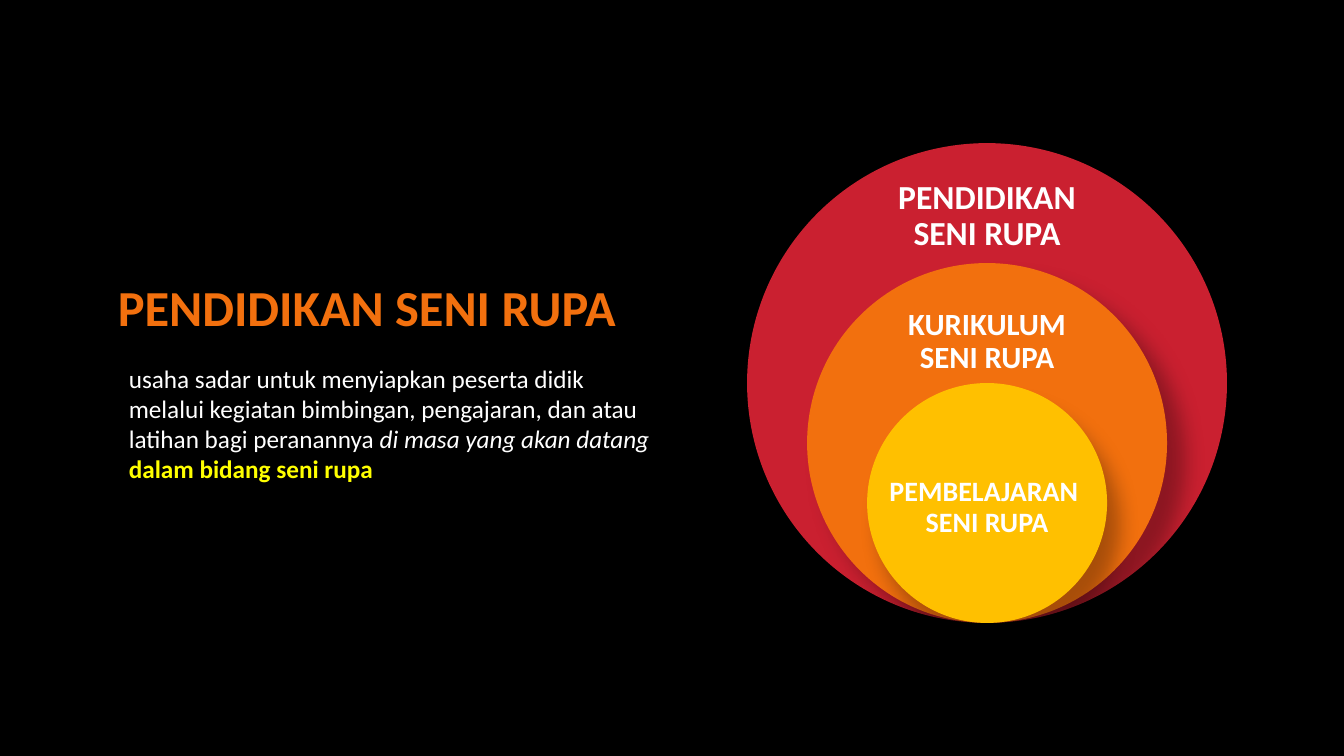
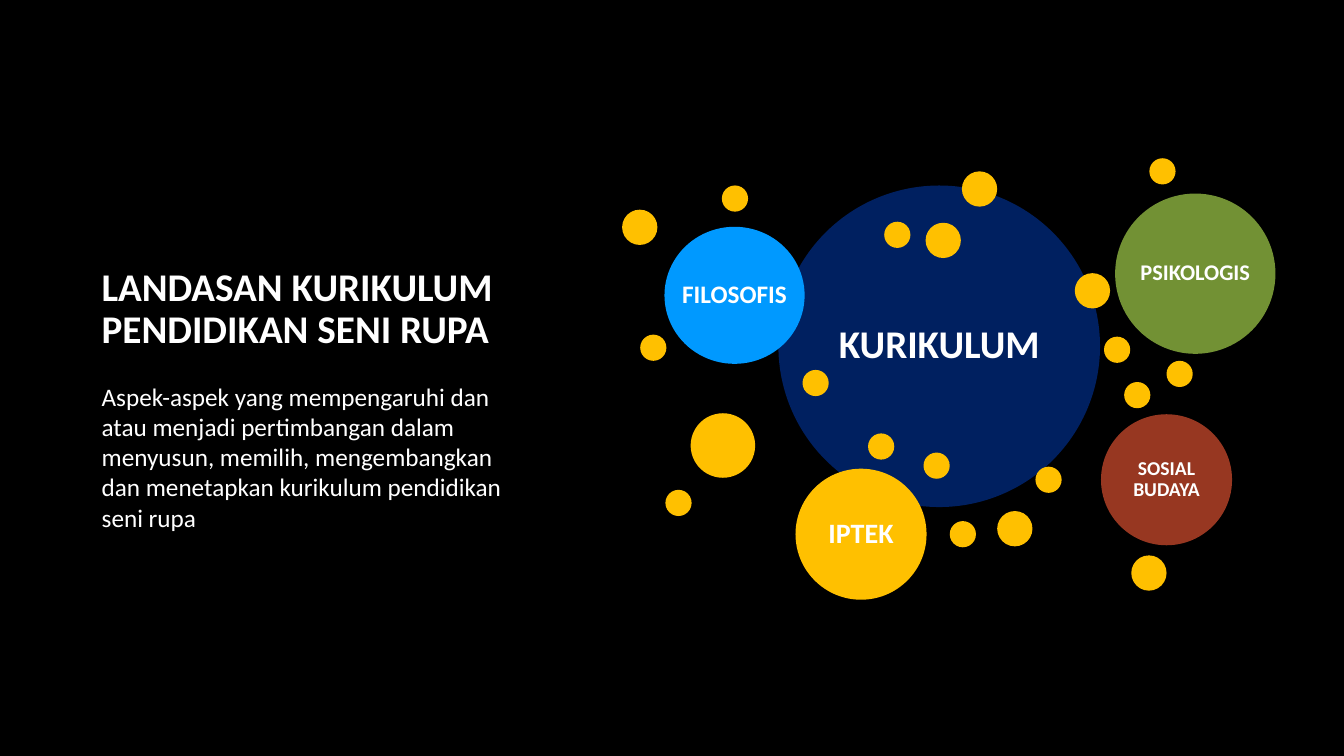
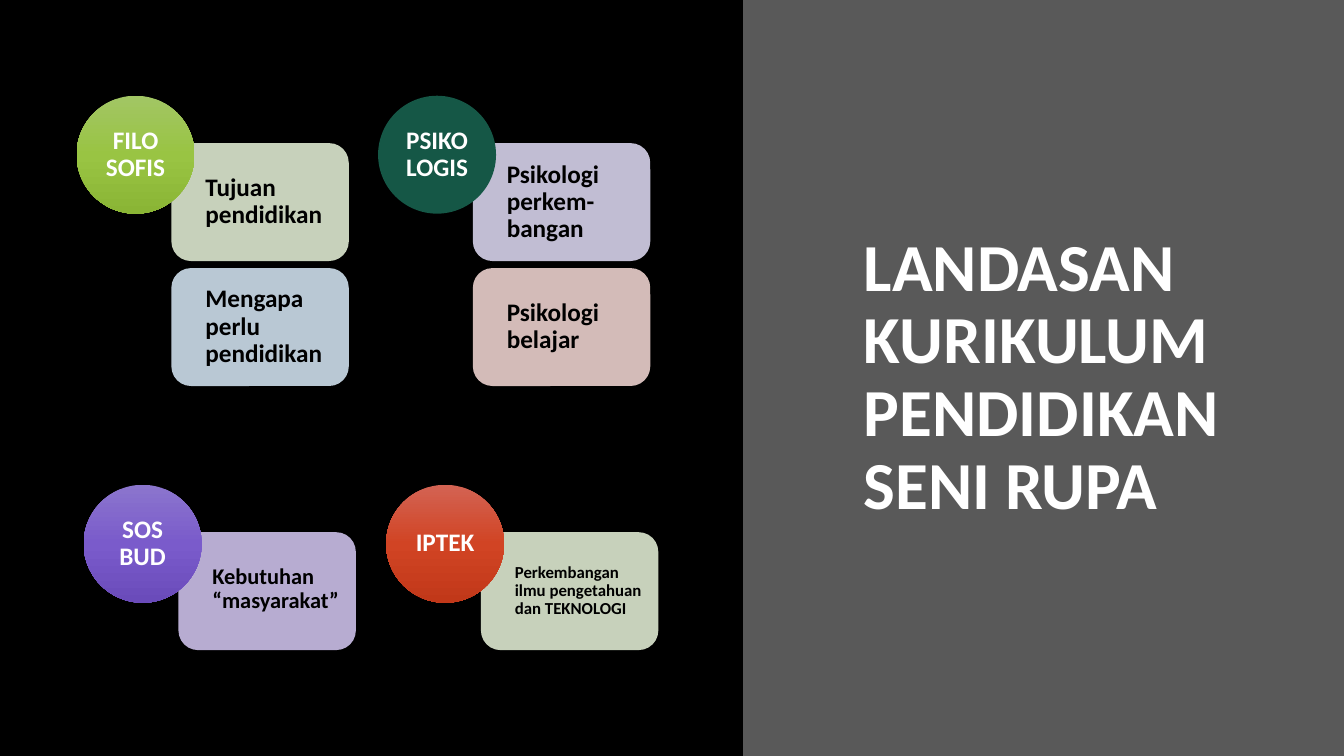
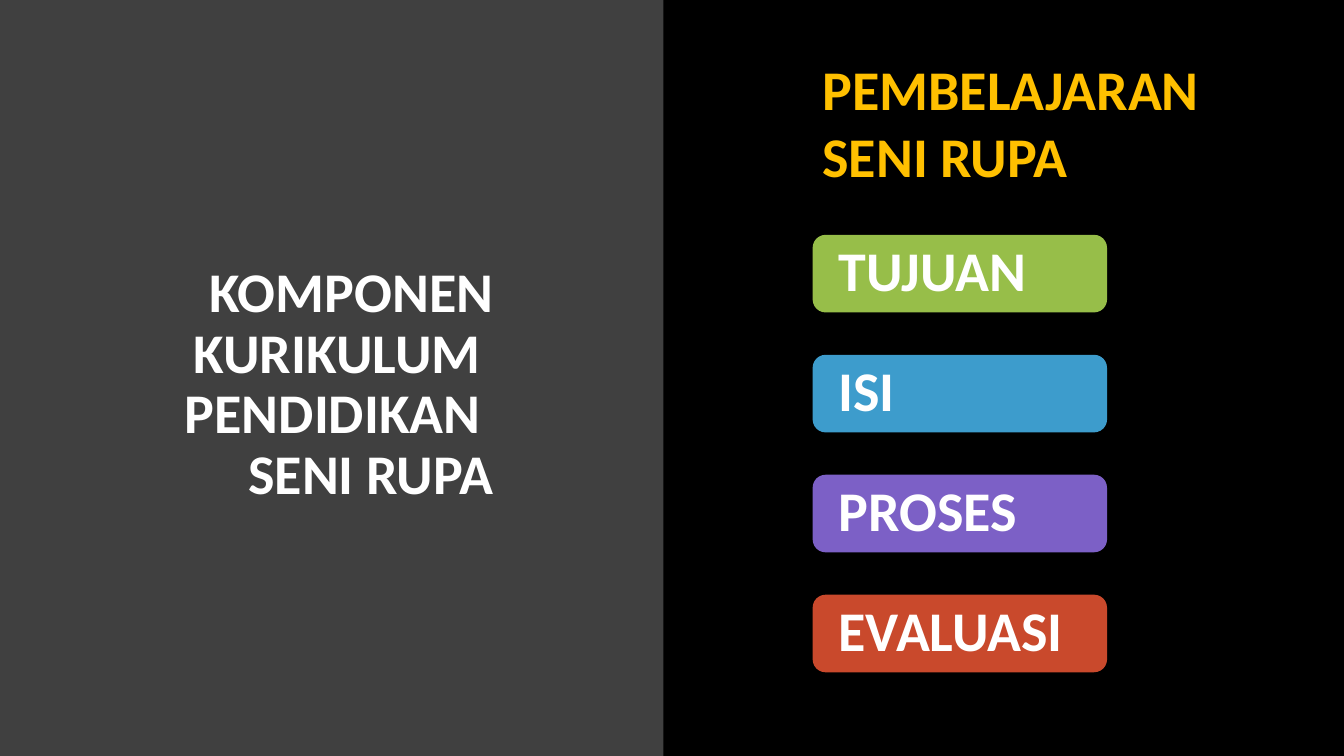
from dataclasses import dataclass
from typing import NamedTuple, Sequence

from lxml import etree
from pptx import Presentation
from pptx.dml.color import RGBColor
from pptx.enum.shapes import MSO_SHAPE
from pptx.enum.text import MSO_ANCHOR, PP_ALIGN
from pptx.oxml.ns import qn
from pptx.shapes.autoshape import Shape
from pptx.slide import Slide
from pptx.util import Inches, Pt

ELLIPSE, RECTANGLE = MSO_SHAPE.OVAL, MSO_SHAPE.RECTANGLE
ROUNDED = MSO_SHAPE.ROUNDED_RECTANGLE
LEFT, CENTER, RIGHT = PP_ALIGN.LEFT, PP_ALIGN.CENTER, PP_ALIGN.RIGHT
TOP, MIDDLE = MSO_ANCHOR.TOP, MSO_ANCHOR.MIDDLE

SLIDE_WIDTH, SLIDE_HEIGHT = 13.33, 7.5
FONT = "Calibri"
TIGHT = 0.9

BLACK = RGBColor(0x00, 0x00, 0x00)
WHITE = RGBColor(0xFF, 0xFF, 0xFF)
YELLOW = RGBColor(0xFF, 0xFF, 0x00)
GOLD = RGBColor(0xFF, 0xC0, 0x00)
ORANGE = RGBColor(0xF2, 0x70, 0x0E)
CRIMSON = RGBColor(0xCA, 0x20, 0x30)
NAVY = RGBColor(0x00, 0x20, 0x60)
SKY = RGBColor(0x00, 0x99, 0xFF)
OLIVE = RGBColor(0x72, 0x91, 0x34)
RUST = RGBColor(0x97, 0x37, 0x21)
GRAY = RGBColor(0x59, 0x59, 0x59)
DARK_GRAY = RGBColor(0x40, 0x40, 0x40)
PINE = RGBColor(0x15, 0x57, 0x46)
PALE_GREEN = RGBColor(0xDD, 0xE8, 0xD0)
PALE_BLUE = RGBColor(0xCE, 0xDE, 0xEC)
PALE_LILAC = RGBColor(0xD7, 0xD2, 0xEA)
PALE_ROSE = RGBColor(0xEB, 0xD0, 0xCD)
LILAC = RGBColor(0xCB, 0xBF, 0xE8)
GREEN = RGBColor(0x97, 0xBE, 0x49)
BLUE = RGBColor(0x3D, 0x9C, 0xCC)
PURPLE = RGBColor(0x7C, 0x60, 0xC6)
RED = RGBColor(0xC9, 0x49, 0x2C)
GREEN_SHADES = (RGBColor(0xA2, 0xC6, 0x64), RGBColor(0x99, 0xC4, 0x43), RGBColor(0x8A, 0xB5, 0x35))
PURPLE_SHADES = (RGBColor(0x8B, 0x75, 0xCD), RGBColor(0x7A, 0x5B, 0xCB), RGBColor(0x6A, 0x4B, 0xBA))
RED_SHADES = (RGBColor(0xD3, 0x63, 0x53), RGBColor(0xD1, 0x44, 0x24), RGBColor(0xC1, 0x38, 0x19))


class Box(NamedTuple):
    """Place in inches."""
    left: float
    top: float
    width: float
    height: float


class Insets(NamedTuple):
    left: float = 0
    top: float = 0
    right: float = 0
    bottom: float = 0


TEXT_BOX_INSETS = Insets(0.1, 0.05, 0.1, 0.05)
CARD_INSETS = Insets(0.28, 0.14, 0.14, 0.14)


@dataclass(frozen=True)
class TextRun:
    text: str
    color: RGBColor = WHITE
    bold: bool = False
    italic: bool = False


@dataclass(frozen=True)
class TextStyle:
    size: float
    align: PP_ALIGN = CENTER
    anchor: MSO_ANCHOR = MIDDLE
    spacing: float = TIGHT
    insets: Insets = Insets()
    wrap: bool = True


@dataclass(frozen=True)
class Ring:
    share: float
    color: RGBColor
    lines: tuple[str, ...]
    style: TextStyle
    shadow_angle: int


@dataclass(frozen=True)
class Bubble:
    box: Box
    color: RGBColor
    label: str
    size: float
    wrap: bool = False


@dataclass(frozen=True)
class Card:
    text: str
    color: RGBColor
    size: float = 18
    insets: Insets = CARD_INSETS


@dataclass(frozen=True)
class Foundation:
    left: float
    top: float
    lines: tuple[str, ...]
    shades: tuple[RGBColor, ...]
    cards: tuple[Card, ...]


def bold_lines(lines: Sequence[str], color: RGBColor = WHITE) -> list[list[TextRun]]:
    return [[TextRun(line, color, bold=True)] for line in lines]


def write_text(shape: Shape, paragraphs: Sequence[Sequence[TextRun]], style: TextStyle) -> None:
    """Fill a shape with runs; a newline inside a run is a line break."""
    frame = shape.text_frame
    frame.word_wrap = style.wrap
    frame.vertical_anchor = style.anchor
    frame.margin_left, frame.margin_top, frame.margin_right, frame.margin_bottom = map(Inches, style.insets)
    for index, text_runs in enumerate(paragraphs):
        paragraph = frame.add_paragraph() if index else frame.paragraphs[0]
        paragraph.alignment = style.align
        paragraph.line_spacing = style.spacing
        for text_run in text_runs:
            for part, text in enumerate(text_run.text.split("\n")):
                if part:
                    paragraph.add_line_break()
                run = paragraph.add_run()
                run.text = text
                run.font.name = FONT
                run.font.size = Pt(style.size)
                run.font.bold = text_run.bold
                run.font.italic = text_run.italic
                run.font.color.rgb = text_run.color


def add_text(slide: Slide, box: Box, paragraphs: Sequence[Sequence[TextRun]], style: TextStyle) -> None:
    write_text(slide.shapes.add_textbox(*map(Inches, box)), paragraphs, style)


def add_title(slide: Slide, box: Box, text: str, size: float,
              color: RGBColor = WHITE, align: PP_ALIGN = LEFT) -> None:
    add_text(slide, box, bold_lines([text], color), TextStyle(size, align, insets=TEXT_BOX_INSETS))


def add_body(slide: Slide, box: Box, paragraphs: Sequence[Sequence[TextRun]], size: float = 18) -> None:
    add_text(slide, box, paragraphs, TextStyle(size, LEFT, TOP, 1, TEXT_BOX_INSETS))


def add_filled(slide: Slide, kind: MSO_SHAPE, box: Box, *colors: RGBColor) -> Shape:
    """One colour gives a solid fill, more give a gradient from top to bottom."""
    shape = slide.shapes.add_shape(kind, *map(Inches, box))
    shape.shadow.inherit = False
    shape.line.fill.background()
    if len(colors) == 1:
        shape.fill.solid()
        shape.fill.fore_color.rgb = colors[0]
        return shape
    shape.fill.gradient()
    shape.fill.gradient_angle = 270
    stops = shape.element.spPr.find(".//" + qn("a:gsLst"))
    for stop in list(stops):
        stops.remove(stop)
    for index, color in enumerate(colors):
        position = 100000 * index // (len(colors) - 1)
        stop = etree.SubElement(stops, qn("a:gs"), pos=str(position))
        etree.SubElement(stop, qn("a:srgbClr"), val=str(color))
    return shape


def set_opacity(shape: Shape, percent: int) -> None:
    color = shape.element.spPr.find(qn("a:solidFill")).find(qn("a:srgbClr"))
    etree.SubElement(color, qn("a:alpha"), val=str(percent * 1000))


def add_shadow(shape: Shape, angle: int) -> None:
    effects = shape.element.spPr.find(qn("a:effectLst"))
    shadow = etree.SubElement(effects, qn("a:outerShdw"), blurRad=str(Pt(15)), dist=str(Pt(18)),
                              dir=str(angle * 60000), algn="ctr", rotWithShape="0")
    color = etree.SubElement(shadow, qn("a:srgbClr"), val=str(BLACK))
    etree.SubElement(color, qn("a:alpha"), val="30000")


RING_CENTER, RING_BOTTOM, RING_DIAMETER = 9.79, 6.18, 4.76
RINGS = (
    Ring(1, CRIMSON, ("PENDIDIKAN SENI RUPA",),
         TextStyle(24, insets=Insets(0.72, 0, 0.72, 3.3)), 45),
    Ring(0.75, ORANGE, ("KURIKULUM SENI RUPA",),
         TextStyle(22, insets=Insets(0.39, 0.31, 0.39, 2.31)), 45),
    Ring(0.5, GOLD, ("PEMBELAJARAN ", "SENI RUPA"),
         TextStyle(20, insets=Insets(top=0.1), wrap=False), 60),
)


def build_education(slide: Slide) -> None:
    for ring in RINGS:
        side = RING_DIAMETER * ring.share
        circle = add_filled(slide, ELLIPSE,
                            Box(RING_CENTER - side / 2, RING_BOTTOM - side, side, side), ring.color)
        add_shadow(circle, ring.shadow_angle)
        write_text(circle, bold_lines(ring.lines), ring.style)
    add_title(slide, Box(1.07, 2.35, 5.7, 1.45), "PENDIDIKAN SENI RUPA", 36, ORANGE)
    add_body(slide, Box(1.18, 3.55, 5.43, 1.62), [[
        TextRun("usaha sadar untuk menyiapkan peserta didik melalui kegiatan bimbingan, "
                "pengajaran, dan atau latihan bagi peranannya "),
        TextRun("di masa yang akan datang ", italic=True),
        TextRun("dalam bidang seni rupa", YELLOW, bold=True),
    ]])


BUBBLES = (
    Bubble(Box(7.72, 1.84, 3.19, 3.19), NAVY, "KURIKULUM", 28),
    Bubble(Box(6.59, 2.25, 1.39, 1.36), SKY, "FILOSOFIS", 18),
    Bubble(Box(11.06, 1.92, 1.59, 1.59), OLIVE, "PSIKOLOGIS", 16),
    Bubble(Box(10.92, 4.11, 1.3, 1.3), RUST, "SOSIAL BUDAYA", 14, wrap=True),
    Bubble(Box(7.89, 4.65, 1.3, 1.3), GOLD, "IPTEK", 20),
)
DOTS_BY_DIAMETER = {
    0.26: ((8.61, 4.3), (10.95, 3.34), (8.77, 2.2), (7.96, 3.67), (6.6, 4.86), (9.16, 4.49),
           (11.15, 3.79), (9.42, 5.17), (7.16, 1.84), (11.4, 1.57), (6.35, 3.32), (10.27, 4.63),
           (11.57, 3.58)),
    0.35: ((9.54, 1.7), (9.89, 5.07), (9.18, 2.21), (10.66, 2.71), (11.22, 5.51), (6.17, 2.08)),
    0.64: ((6.85, 4.1),),
}


def build_foundations(slide: Slide) -> None:
    add_title(slide, Box(0.91, 2.35, 5.42, 1.45), "LANDASAN KURIKULUM \nPENDIDIKAN SENI RUPA", 28)
    for bubble in BUBBLES:
        circle = add_filled(slide, ELLIPSE, bubble.box, bubble.color)
        write_text(circle, bold_lines([bubble.label]), TextStyle(bubble.size, wrap=bubble.wrap))
    for diameter, places in DOTS_BY_DIAMETER.items():
        for left, top in places:
            add_filled(slide, ELLIPSE, Box(left, top, diameter, diameter), GOLD)
    add_body(slide, Box(0.91, 3.73, 4.21, 1.62), [[
        TextRun("Aspek-aspek yang mempengaruhi dan atau menjadi pertimbangan dalam menyusun, "
                "memilih, mengembangkan dan menetapkan kurikulum pendidikan seni rupa")]])


DISC = 1.17
CARD_WIDTH, CARD_HEIGHT, CARD_PITCH = 1.76, 1.17, 1.24
CARD_SHIFT_X, CARD_SHIFT_Y = 0.94, 0.47
FOUNDATIONS = (
    Foundation(0.76, 0.95, ("FILO", "SOFIS"), GREEN_SHADES,
               (Card("Tujuan pendidikan", PALE_GREEN), Card("Mengapa perlu pendidikan", PALE_BLUE))),
    Foundation(3.75, 0.95, ("PSIKO", "LOGIS"), (PINE,),
               (Card("Psikologi perkem-bangan", PALE_LILAC), Card("Psikologi belajar", PALE_ROSE))),
    Foundation(0.83, 4.81, ("SOS", "BUD"), PURPLE_SHADES,
               (Card("Kebutuhan “masyarakat”", LILAC, 16, Insets(0.28, 0.08, 0, 0.12)),)),
    Foundation(3.83, 4.81, ("IPTEK",), RED_SHADES,
               (Card("Perkembangan ilmu pengetahuan dan TEKNOLOGI", PALE_GREEN, 12,
                     Insets(0.28, 0.11, 0.04, 0.11)),)),
)


def build_foundation_details(slide: Slide) -> None:
    panel_left = 7.37
    add_filled(slide, RECTANGLE, Box(panel_left, 0, SLIDE_WIDTH - panel_left, SLIDE_HEIGHT), GRAY)
    add_title(slide, Box(8.47, 3.03, 4.37, 1.45), "LANDASAN KURIKULUM PENDIDIKAN SENI RUPA", 48)
    for foundation in FOUNDATIONS:
        for row, card in enumerate(foundation.cards):
            box = Box(foundation.left + CARD_SHIFT_X,
                      foundation.top + CARD_SHIFT_Y + row * CARD_PITCH, CARD_WIDTH, CARD_HEIGHT)
            shape = add_filled(slide, ROUNDED, box, card.color)
            set_opacity(shape, 90)
            write_text(shape, bold_lines([card.text], BLACK),
                       TextStyle(card.size, LEFT, insets=card.insets))
        disc = add_filled(slide, ELLIPSE, Box(foundation.left, foundation.top, DISC, DISC),
                          *foundation.shades)
        write_text(disc, bold_lines(foundation.lines), TextStyle(18, wrap=False))


COMPONENTS = (("TUJUAN", GREEN), ("ISI", BLUE), ("PROSES", PURPLE), ("EVALUASI", RED))
COMPONENT_PITCH = 1.19


def build_components(slide: Slide) -> None:
    add_filled(slide, RECTANGLE, Box(0, 0, 6.58, SLIDE_HEIGHT), DARK_GRAY)
    add_title(slide, Box(1.05, 3.1, 3.94, 1.45), "KOMPONEN KURIKULUM \nPENDIDIKAN \nSENI RUPA",
              40, align=RIGHT)
    for row, (label, color) in enumerate(COMPONENTS):
        bar = add_filled(slide, ROUNDED, Box(8.06, 2.33 + row * COMPONENT_PITCH, 2.92, 0.77), color)
        write_text(bar, bold_lines([label]), TextStyle(40, LEFT, insets=Insets(left=0.22)))
    add_body(slide, Box(8.06, 0.49, 4.23, 1.45),
             bold_lines(["PEMBELAJARAN", "SENI RUPA"], GOLD), 40)


def main() -> None:
    presentation = Presentation()
    presentation.slide_width = Inches(SLIDE_WIDTH)
    presentation.slide_height = Inches(SLIDE_HEIGHT)
    background = presentation.slide_master.background.fill
    background.solid()
    background.fore_color.rgb = BLACK
    blank = presentation.slide_layouts[6]
    for build in (build_education, build_foundations, build_foundation_details, build_components):
        build(presentation.slides.add_slide(blank))
    presentation.save("out.pptx")


if __name__ == "__main__":
    main()
